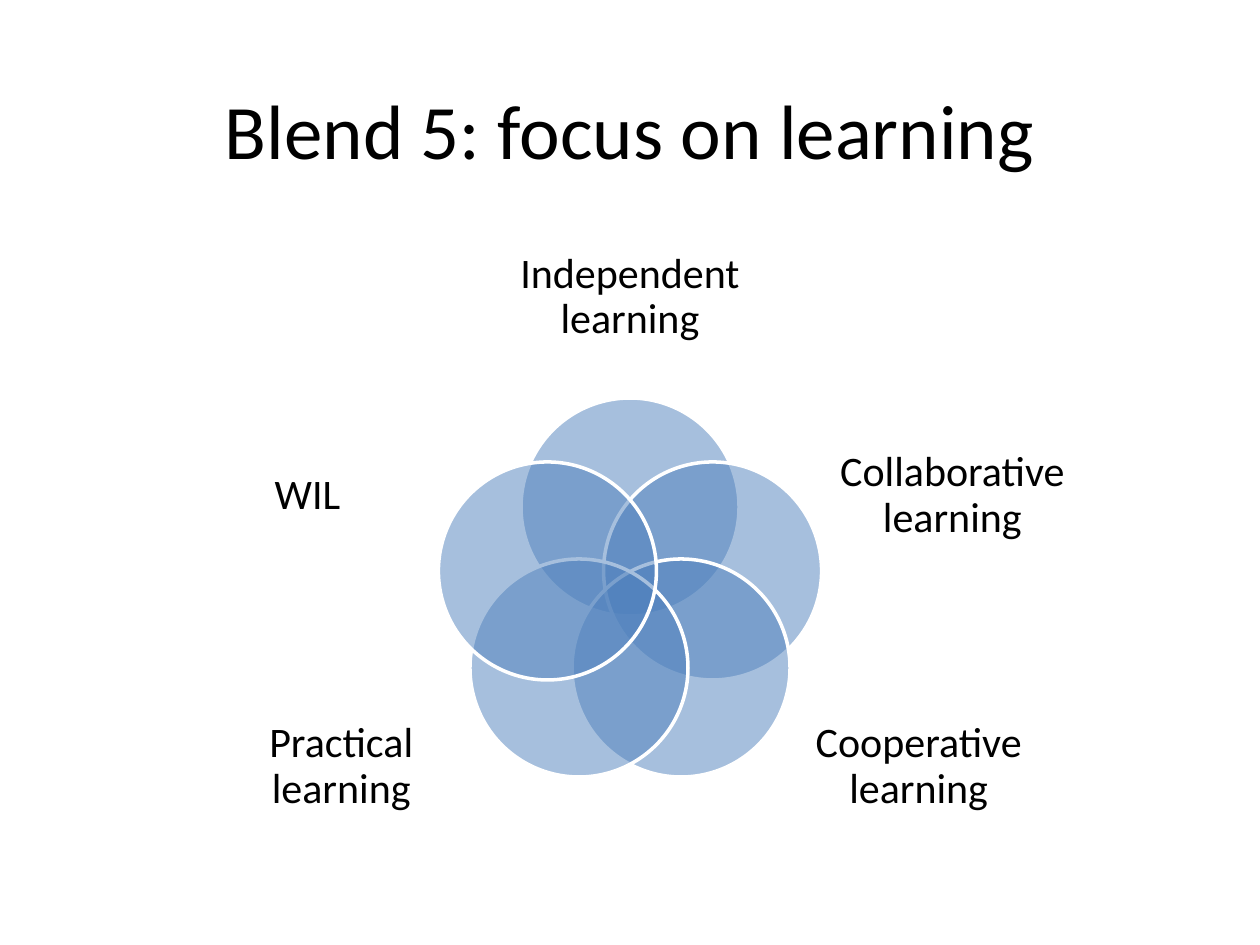
from math import cos, pi, sin

from lxml import etree
from pptx import Presentation
from pptx.dml.color import RGBColor
from pptx.enum.shapes import MSO_SHAPE
from pptx.enum.text import MSO_ANCHOR, PP_ALIGN
from pptx.oxml.ns import qn
from pptx.util import Cm, Pt

OVAL = MSO_SHAPE.OVAL
MIDDLE = MSO_ANCHOR.MIDDLE
CENTER = PP_ALIGN.CENTER
FONT = "Calibri"
COLORS = {"text": "000000", "petal": "4F81BD", "edge": "FFFFFF"}
PETALS = [
    ("Independent learning", 1.83, (0, -6.06), (5.1, 2.95)),
    ("Collaborative learning", 1.75, (6.5, -2.05), (4.57, 3.2)),
    ("Cooperative learning", 1.75, (5.82, 3.41), (4.57, 3.2)),
    ("Practical learning", 1.75, (-5.82, 3.41), (4.57, 3.2)),
    ("WIL", 1.75, (-6.5, -2.05), (4.57, 3.2)),
]


def paint(name):
    """Return the named colour."""
    return RGBColor.from_string(COLORS[name])


def put_text(slide, text, box, size=24, color="text", spacing=1.0, inset=0):
    """Add centred, wrapped text in a box given in centimetres."""
    frame = slide.shapes.add_textbox(*map(Cm, box)).text_frame
    frame.word_wrap = True
    frame.vertical_anchor = MIDDLE
    frame.margin_left = frame.margin_right = Cm(inset)
    frame.margin_top = frame.margin_bottom = Cm(inset / 2)
    para = frame.paragraphs[0]
    para.alignment = CENTER
    para.line_spacing = spacing
    run = para.add_run()
    run.text = text
    run.font.name = FONT
    run.font.size = Pt(size)
    run.font.color.rgb = paint(color)


def put_disc(slide, x, y, size, alpha=50):
    """Add a translucent disc centred on a point."""
    disc = slide.shapes.add_shape(
        OVAL, Cm(x - size / 2), Cm(y - size / 2), Cm(size), Cm(size))
    disc.shadow.inherit = False
    disc.fill.solid()
    disc.fill.fore_color.rgb = paint("petal")
    tint = disc.fill._xPr.find(qn("a:solidFill"))[0]
    etree.SubElement(tint, qn("a:alpha")).set("val", str(alpha * 1000))
    disc.line.color.rgb = paint("edge")
    disc.line.width = Pt(2)


def put_venn(slide, left, top, width, height):
    """Place five overlapping discs in a ring with labels around them."""
    mid_x, mid_y = left + width / 2, top + height * 0.6
    for i, (label, reach, (dx, dy), (w, h)) in enumerate(PETALS):
        angle = 2 * pi * i / len(PETALS)
        put_disc(slide, mid_x + reach * sin(angle),
                 mid_y - reach * cos(angle), width / 4)
        put_text(slide, label,
                 (mid_x + dx - w / 2, mid_y + dy - h / 2, w, h), spacing=0.9)


def main():
    """Build and save the slide."""
    deck = Presentation()
    deck.slide_width, deck.slide_height = Cm(25.4), Cm(19.05)
    slide = deck.slides.add_slide(deck.slide_layouts[6])
    put_text(slide, "Blend 5: focus on learning",
             (1.27, 1.02, 22.86, 3.17), size=44, inset=0.25)
    put_venn(slide, 3.91, 4.52, 17.58, 12.55)
    deck.save("out.pptx")


if __name__ == "__main__":
    main()
